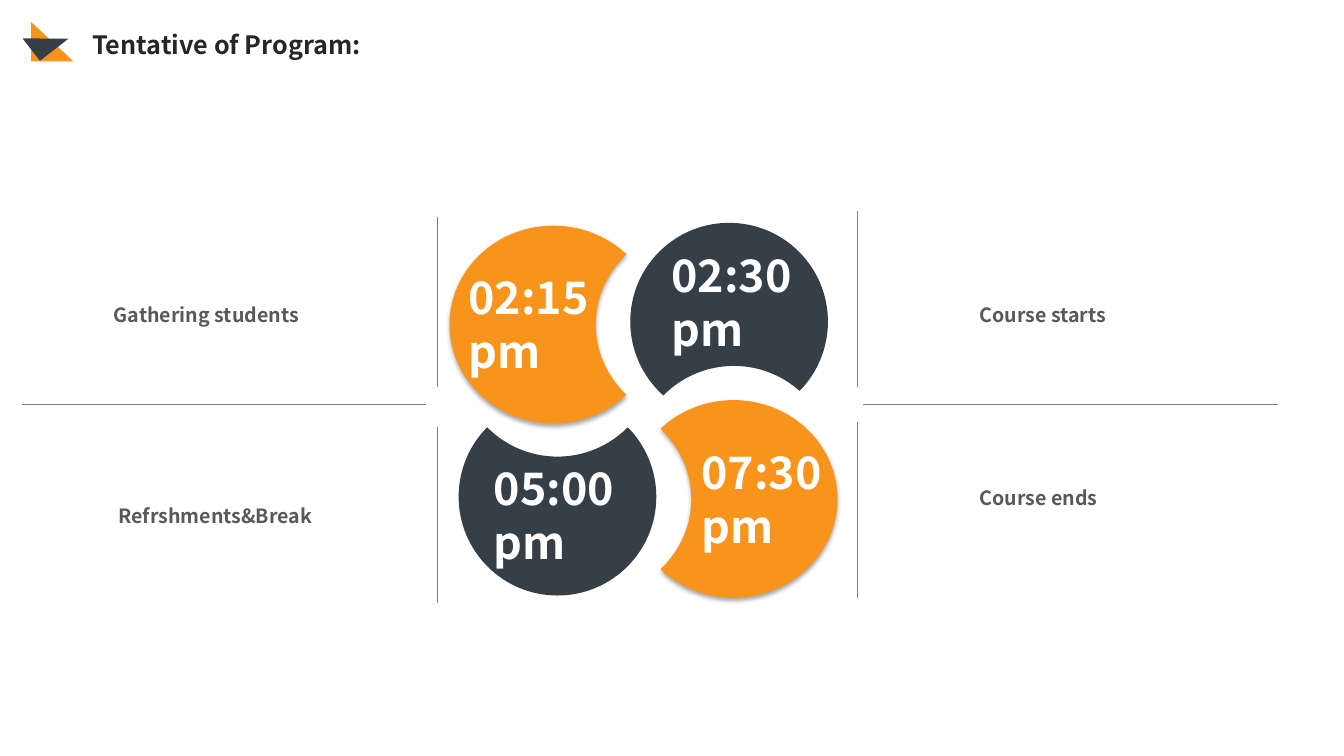
from math import acos, atan2, ceil, cos, pi, sin, tan

from lxml.etree import SubElement
from pptx import Presentation
from pptx.dml.color import RGBColor
from pptx.enum.shapes import MSO_CONNECTOR as Connector, MSO_SHAPE as Shape
from pptx.enum.text import MSO_ANCHOR as Anchor, MSO_AUTO_SIZE as AutoSize, PP_ALIGN as Align
from pptx.oxml.ns import qn
from pptx.util import Pt

FONT = "Noto Sans CJK SC"
ORANGE = RGBColor(0xF8, 0x94, 0x1C)
SLATE = RGBColor(0x35, 0x3F, 0x48)
WHITE = RGBColor(0xFF, 0xFF, 0xFF)
TITLE_INK = RGBColor(0x26, 0x26, 0x26)
LABEL_INK = RGBColor(0x59, 0x59, 0x59)
RULE_GREY = RGBColor(0x7F, 0x7F, 0x7F)

WIDE = (74.2, 70.6)
ROUND = (70.6, 70.6)

# Time, colour, centre, radii, offset of the bite, text box
DISCS = [
    ("02:15 pm", ORANGE, (395.3, 231.8), WIDE, (104.4, 0), (327.6, 189.4, 103, 85)),
    ("02:30 pm", SLATE, (520.8, 229.8), ROUND, (3.4, 102.2), (472.5, 173.5, 108, 85)),
    ("07:30 pm", ORANGE, (524, 356.4), WIDE, (-104.4, 0), (493.9, 313.9, 104.4, 85)),
    ("05:00 pm", SLATE, (398.2, 354.8), ROUND, (0, -99.2), (345.6, 325.4, 105.8, 85)),
]
LABELS = [
    ("Gathering students", (74.2, 204.5, 154.8, 32.4)),
    (" Refrshments&Break", (74.2, 347.8, 162, 32.4)),
    ("Course starts", (692.6, 204.5, 133.2, 32.4)),
    ("Course ends", (692.6, 335, 170.6, 32.4)),
]
RULES = [
    (312.5, 154.8, 312.5, 276.5),
    (312.5, 305.3, 312.5, 431),
    (612.7, 301.3, 612.7, 427),
    (612.7, 150.9, 612.7, 276.5),
    (616.7, 288.7, 913, 288.7),
    (304.1, 288.7, 15.8, 288.7),
]


def write(box, text, size, colour, spacing=1.0):
    frame = box.text_frame
    frame.word_wrap = True
    frame.auto_size = AutoSize.NONE
    frame.vertical_anchor = Anchor.TOP
    frame.text = text
    para = frame.paragraphs[0]
    para.alignment = Align.LEFT
    para.line_spacing = spacing
    font = para.runs[0].font
    font.name, font.size, font.bold = FONT, Pt(size), True
    font.color.rgb = colour


def add_text(page, text, place, size, colour, spacing=1.0):
    box = page.shapes.add_textbox(*map(Pt, place))
    write(box, text, size, colour, spacing)


def paint(shape, colour):
    shape.fill.solid()
    shape.fill.fore_color.rgb = colour
    shape.line.fill.background()
    shape.shadow.inherit = False


def add_triangle(page, place, colour, turn=0):
    triangle = page.shapes.add_shape(Shape.RIGHT_TRIANGLE, *map(Pt, place))
    triangle.rotation = turn
    paint(triangle, colour)


def add_title(page, text, place):
    title = page.shapes.title
    title.left, title.top, title.width, title.height = map(Pt, place)
    write(title, text, 18, TITLE_INK)


def arc_curves(centre, radii, start, end):
    """Cubic curves along an ellipse, split at its quarter points."""
    low, high = sorted((start, end))
    quarters = [n * pi / 2 for n in range(ceil(low / (pi / 2)), ceil(high / (pi / 2)))]
    angles = sorted([start, *quarters, end], reverse=start > end)

    def point(angle, pull=0):
        across = cos(angle) - pull * sin(angle)
        down = sin(angle) + pull * cos(angle)
        return Pt(centre[0] + radii[0] * across), Pt(centre[1] + radii[1] * down)

    curves = []
    for a, b in zip(angles, angles[1:]):
        pull = 4 / 3 * tan((b - a) / 4)
        curves.append((point(a), point(a, pull), point(b, -pull), point(b)))
    return curves


def bitten_outline(centre, radii, offset):
    """Ellipse with a bite cut by an equal ellipse, moved by the offset."""
    across, down = offset[0] / radii[0], offset[1] / radii[1]
    toward = atan2(down, across)
    half = acos((across ** 2 + down ** 2) ** 0.5 / 2)
    bite = (centre[0] + offset[0], centre[1] + offset[1])
    rim = arc_curves(centre, radii, toward + half, toward + 2 * pi - half)
    hollow = arc_curves(bite, radii, toward + pi + half, toward + pi - half)
    return rim + hollow


def add_curved_shape(page, curves):
    builder = page.shapes.build_freeform(*curves[0][0])
    builder.add_line_segments([curve[-1] for curve in curves], close=True)
    shape = builder.convert_to_shape()
    # Bend each straight segment into its curve
    segments = list(shape._element.iter(qn("a:lnTo")))
    for segment, curve in zip(segments, curves):
        bend = segment.makeelement(qn("a:cubicBezTo"))
        for x, y in curve[1:]:
            SubElement(bend, qn("a:pt"), x=str(x - shape.left), y=str(y - shape.top))
        segment.getparent().replace(segment, bend)
    return shape


def add_soft_shadow(shape):
    effects = shape._element.spPr.find(qn("a:effectLst"))
    shadow = SubElement(effects, qn("a:outerShdw"), blurRad=str(Pt(3.1)),
                        dist=str(Pt(1.8)), dir="5400000", algn="t", rotWithShape="0")
    black = SubElement(shadow, qn("a:srgbClr"), val="000000")
    SubElement(black, qn("a:alpha"), val="35000")


def add_disc(page, time, colour, centre, radii, offset, place):
    disc = add_curved_shape(page, bitten_outline(centre, radii, offset))
    paint(disc, colour)
    if colour == ORANGE:
        add_soft_shadow(disc)
    add_text(page, time, place, 32, WHITE)


def add_rule(page, ends):
    rule = page.shapes.add_connector(Connector.STRAIGHT, *map(Pt, ends))
    rule.line.color.rgb = RULE_GREY
    rule.line.width = Pt(0.75)
    SubElement(rule._element.spPr, qn("a:effectLst"))


def main():
    deck = Presentation()
    deck.slide_width, deck.slide_height = Pt(960), Pt(540)
    page = deck.slides.add_slide(deck.slide_layouts[5])

    # Heading with its triangle ornament
    add_triangle(page, (22.3, 15.8, 30.2, 28.1), ORANGE)
    add_triangle(page, (19.6, 17.4, 25.9, 20.2), SLATE, 322.2)
    add_title(page, "Tentative of Program:", (58.7, 17.5, 230.4, 28.8))

    # Interlocking time discs
    for disc in DISCS:
        add_disc(page, *disc)

    # Dividing lines
    for ends in RULES:
        add_rule(page, ends)

    # Programme items
    for text, place in LABELS:
        add_text(page, text, place, 14, LABEL_INK, 1.5)

    deck.save("out.pptx")


if __name__ == "__main__":
    main()
